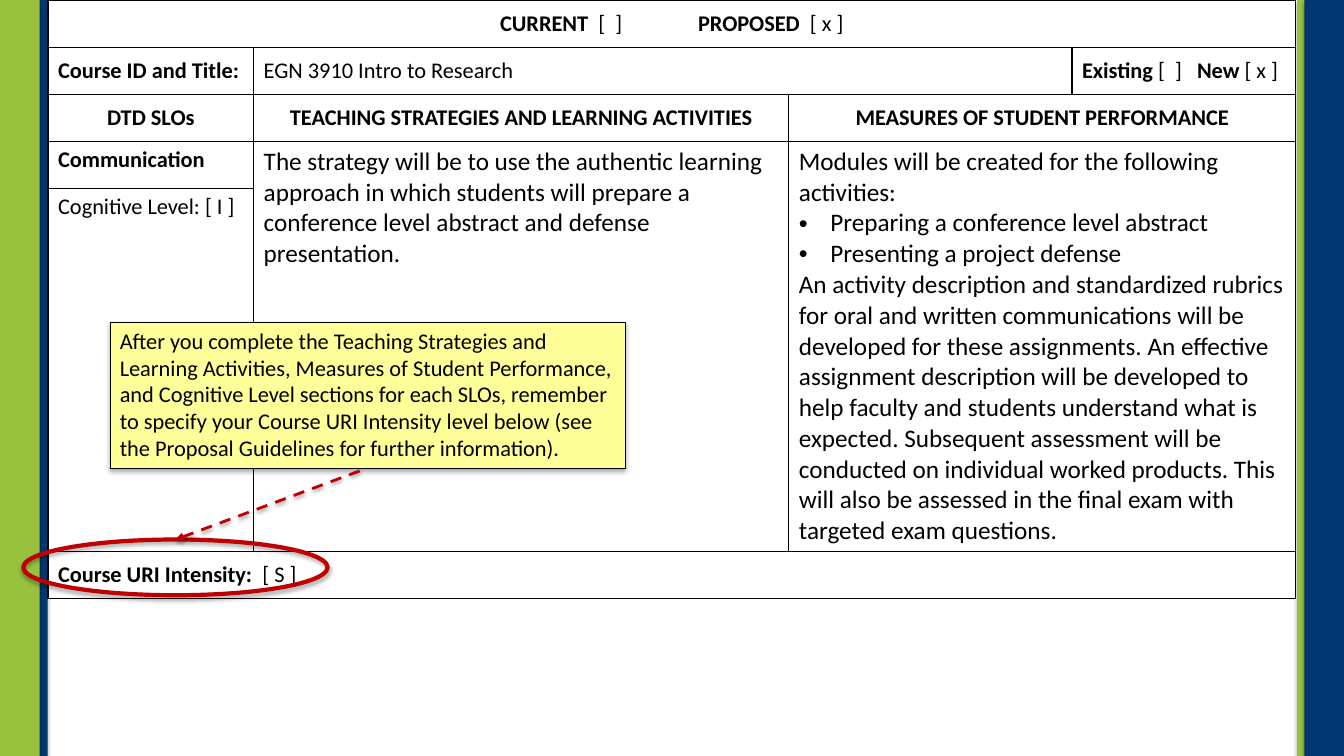
from pptx import Presentation
from pptx.dml.color import RGBColor
from pptx.enum.dml import MSO_LINE
from pptx.enum.shapes import MSO_CONNECTOR, MSO_SHAPE
from pptx.enum.text import MSO_ANCHOR, MSO_AUTO_SIZE, PP_ALIGN
from pptx.oxml import parse_xml
from pptx.oxml.ns import nsdecls
from pptx.util import Pt

BLACK, WHITE, RED, YELLOW, NAVY, GREEN = "000000", "FFFFFF", "C00000", "FFFF99", "023870", "98C13E"
NS = nsdecls("a")
MID, TOP = MSO_ANCHOR.MIDDLE, MSO_ANCHOR.TOP
LEFT, CENTER = PP_ALIGN.LEFT, PP_ALIGN.CENTER

BARS = [(5.8, NAVY), (926.6, GREEN), (0, GREEN), (931.7, NAVY)]
COLS = [146.9, 382.3, 202.3, 159.8]
ROWS = [33.7] * 4 + [258.8, 33.7]
SHADOWS = {"bar": (35, 3.1, 1.8), "arrow": (38, 3.1, 1.6), "callout": (32, 3.5, 2.2)}
MEASURES = [
    "Modules will be created for the following activities:",
    "•Preparing a conference level abstract",
    "•Presenting a project defense",
    "An activity description and standardized rubrics for oral and written communications will be "
    "developed for these assignments. An effective assignment description will be developed to help "
    "faculty and students understand what is expected. Subsequent assessment will be conducted on "
    "individual worked products. This will also be assessed in the final exam with targeted exam questions.",
]
STRATEGY = ("The strategy will be to use the authentic learning approach in which students will prepare "
            "a conference level abstract and defense presentation.")
REMINDER = ("After you complete the Teaching Strategies and Learning Activities, Measures of Student "
            "Performance, and Cognitive Level sections for each SLOs, remember to specify your Course URI "
            "Intensity level below (see the Proposal Guidelines for further information).")

# row, column, row span, column span, size, alignment, anchor, tab stops, paragraphs (*bold*)
CELLS = [
    (0, 0, 1, 4, 16, LEFT, MID, [315.7, 457.1], ["\t*CURRENT*  [  ]\t*PROPOSED*  [ x ]"]),
    (1, 0, 1, 1, 16, LEFT, MID, [], ["*Course ID and Title:*"]),
    (1, 1, 1, 2, 16, LEFT, MID, [], ["EGN 3910 Intro to Research"]),
    (1, 3, 1, 1, 16, LEFT, MID, [82.1], ["*Existing *[  ]\t*New *[ x ]"]),
    (2, 0, 1, 1, 16, CENTER, MID, [], ["*DTD SLOs*"]),
    (2, 1, 1, 1, 16, CENTER, MID, [], ["*TEACHING STRATEGIES AND LEARNING ACTIVITIES*"]),
    (2, 2, 1, 2, 16, CENTER, MID, [], ["*MEASURES OF STUDENT PERFORMANCE*"]),
    (3, 0, 1, 1, 16, LEFT, TOP, [], ["*Communication*"]),
    (3, 1, 2, 1, 18, LEFT, TOP, [], [STRATEGY]),
    (3, 2, 2, 2, 18, LEFT, TOP, [], MEASURES),
    (4, 0, 1, 1, 16, LEFT, TOP, [], ["Cognitive Level: [ I ]"]),
    (5, 0, 1, 4, 16, LEFT, MID, [], ["*Course URI Intensity:*  [ S ]"]),
]


def rgb(value):
    return RGBColor.from_string(value)


def write(tf, paragraphs, size, align=LEFT, tabs=()):
    for i, text in enumerate(paragraphs):
        p = tf.paragraphs[0] if i == 0 else tf.add_paragraph()
        p.alignment = align
        pPr = p._p.get_or_add_pPr()
        if text.startswith("•"):
            text = text[1:]
            pPr.set("marL", str(Pt(22.5)))
            pPr.set("indent", str(-Pt(22.5)))
            pPr.append(parse_xml(f'<a:buFont {NS} typeface="Arial"/>'))
            pPr.append(parse_xml(f'<a:buChar {NS} char="•"/>'))
        if tabs:
            stops = "".join(f'<a:tab pos="{Pt(tab)}" algn="l"/>' for tab in tabs)
            pPr.append(parse_xml(f'<a:tabLst {NS}>{stops}</a:tabLst>'))
        for n, part in enumerate(text.split("*")):
            if part:
                r = p.add_run()
                r.text = part
                for name, value in {"name": "Calibri", "size": Pt(size), "bold": n % 2 == 1}.items():
                    setattr(r.font, name, value)
                r.font.color.rgb = rgb(BLACK)


def add_shadow(sp, kind):
    alpha, blur, dist = SHADOWS[kind]
    sp._element.spPr.append(parse_xml(
        f'<a:effectLst {NS}><a:outerShdw blurRad="{Pt(blur)}" dist="{Pt(dist)}" dir="5400000" rotWithShape="0">'
        f'<a:srgbClr val="{BLACK}"><a:alpha val="{alpha * 1000}"/></a:srgbClr></a:outerShdw></a:effectLst>'))


def add_box(s, shape, box, fill, line, width, shadow):
    sp = s.shapes.add_shape(shape, *map(Pt, box))
    if fill:
        sp.fill.solid()
        sp.fill.fore_color.rgb = rgb(fill)
    else:
        sp.fill.background()
    if line:
        sp.line.color.rgb = rgb(line)
        sp.line.width = Pt(width)
    else:
        sp.line.fill.background()
    add_shadow(sp, shadow)
    return sp


def add_form(s):
    frame = s.shapes.add_table(len(ROWS), len(COLS), Pt(34.3), Pt(0), Pt(sum(COLS)), Pt(sum(ROWS)))
    table = frame.table
    table.first_row = table.horz_banding = False
    for col, width in zip(table.columns, COLS):
        col.width = Pt(width)
    for row, height in zip(table.rows, ROWS):
        row.height = Pt(height)
    for cell in table.iter_cells():
        tcPr = cell._tc.get_or_add_tcPr()
        for side in "LRTB":
            tcPr.append(parse_xml(f'<a:ln{side} {NS} w="{Pt(1)}"><a:solidFill><a:srgbClr val="{BLACK}"/>'
                                  f'</a:solidFill></a:ln{side}>'))
        cell.fill.solid()
        cell.fill.fore_color.rgb = rgb(WHITE)
    for row, col, down, across, size, align, anchor, tabs, paragraphs in CELLS:
        cell = table.cell(row, col)
        if down * across > 1:
            cell.merge(table.cell(row + down - 1, col + across - 1))
        cell.vertical_anchor = anchor
        write(cell.text_frame, paragraphs, size, align, tabs)


def main():
    prs = Presentation()
    prs.slide_width, prs.slide_height = Pt(960), Pt(540)
    s = prs.slides.add_slide(prs.slide_layouts[6])
    for left, color in BARS:
        add_box(s, MSO_SHAPE.RECTANGLE, (left, 0, 28.3, 540), color, None, 0, "bar")
    add_form(s)
    oval = add_box(s, MSO_SHAPE.OVAL, (16.6, 385.4, 217.4, 39.8), None, RED, 3, "bar")
    callout = add_box(s, MSO_SHAPE.RECTANGLE, (78.5, 229.9, 368, 104.4), YELLOW, BLACK, 0.25, "callout")
    tf = callout.text_frame
    for name, value in {"word_wrap": True, "auto_size": MSO_AUTO_SIZE.SHAPE_TO_FIT_TEXT,
                        "vertical_anchor": TOP}.items():
        setattr(tf, name, value)
    write(tf, [REMINDER], 16)

    arrow = s.shapes.add_connector(MSO_CONNECTOR.STRAIGHT, 0, 0, 0, 0)
    arrow.begin_connect(oval, 0)
    arrow.end_connect(callout, 2)
    arrow.line.color.rgb = rgb(RED)
    arrow.line.width = Pt(2)
    arrow.line.dash_style = MSO_LINE.DASH
    arrow.line._get_or_add_ln().append(parse_xml(f'<a:headEnd {NS} type="triangle"/>'))
    add_shadow(arrow, "arrow")
    prs.save("out.pptx")


if __name__ == "__main__":
    main()
